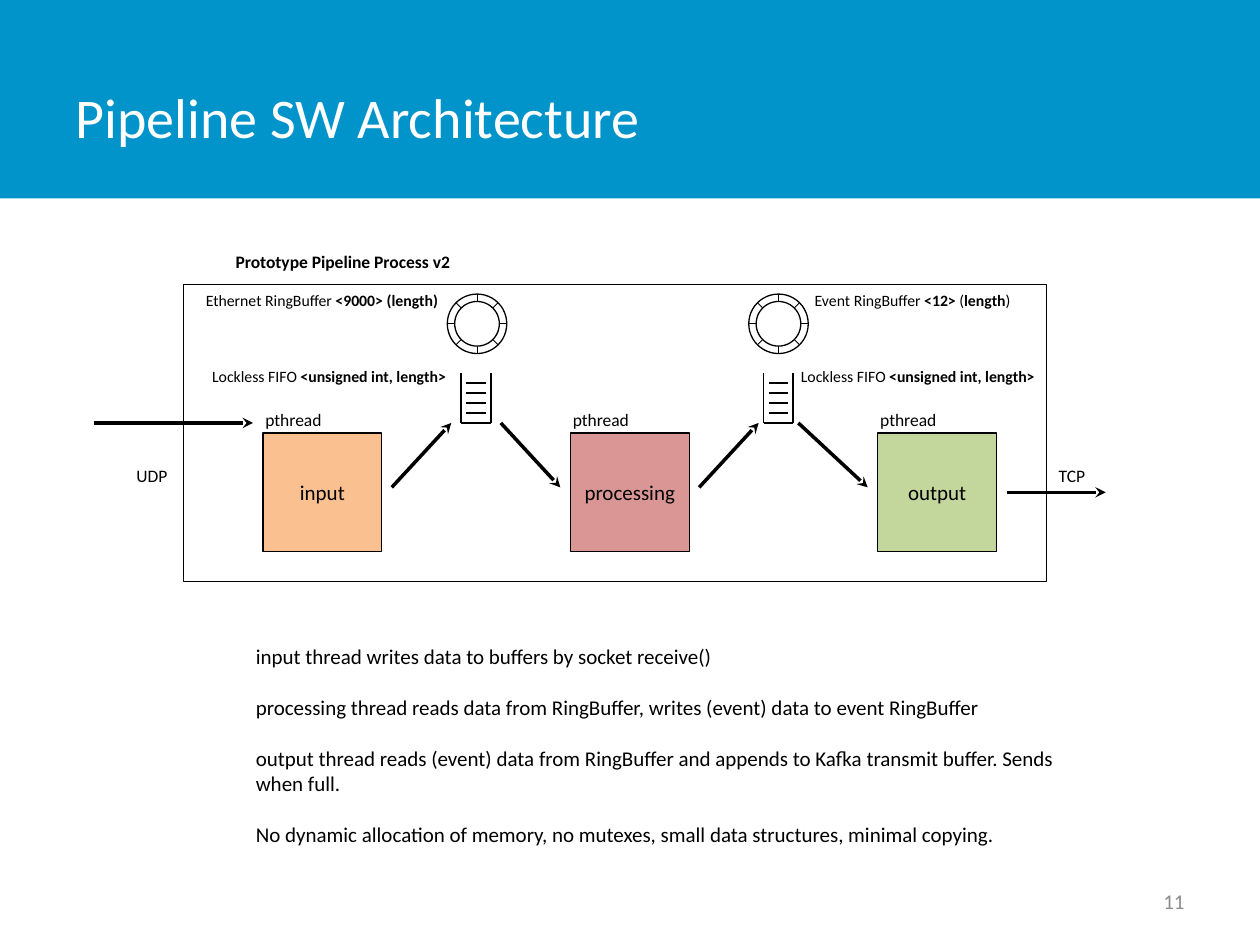
from dataclasses import dataclass
from math import cos, pi, sin
from typing import Any

from lxml.etree import SubElement
from pptx import Presentation
from pptx.dml.color import RGBColor
from pptx.enum.shapes import MSO_CONNECTOR, MSO_SHAPE
from pptx.enum.text import MSO_ANCHOR, MSO_AUTO_SIZE, PP_ALIGN
from pptx.oxml.ns import qn
from pptx.util import Inches, Pt

COLORS = {
    "banner": "0094CA", "input": "FAC090", "processing": "D99694",
    "output": "C3D69B", "ink": "000000", "paper": "FFFFFF", "page": "8C8C8C",
}
FONT = "Calibri"
CELL = 0.0787
GRID_LEFT, GRID_TOP = 0.04, 2.255
SPOKES = 8


@dataclass(frozen=True)
class Thread:
    name: str
    column: float


@dataclass(frozen=True)
class Buffer:
    ring_center: float
    fifo_left: float


@dataclass(frozen=True)
class Arrow:
    start: tuple[float, float]
    end: tuple[float, float]


@dataclass(frozen=True)
class Label:
    text: str
    column: float
    row: float
    columns: float
    bold: bool = False


@dataclass(frozen=True)
class Line:
    runs: tuple[tuple[str, bool], ...]
    indent: float = 0


@dataclass(frozen=True)
class BufferNote:
    column: float
    columns: float
    lines: tuple[Line, Line]


THREADS = [Thread(name, 26 + 31 * index)
           for index, name in enumerate(("input", "processing", "output"))]
BUFFERS = [Buffer(47.6, 46), Buffer(78, 76.5)]
ARROWS = [
    Arrow((9, 14), (25, 14)),
    Arrow((39, 20.5), (45, 14)),
    Arrow((50, 14), (56, 20.5)),
    Arrow((70, 20.5), (76, 14)),
    Arrow((80, 14), (87, 20.5)),
    Arrow((101, 21), (111, 21)),
]
LABELS = [Label("pthread", thread.column - 1, 12, 9) for thread in THREADS] + [
    Label("Prototype Pipeline Process v2", 22, -4, 26, True),
    Label("UDP", 12, 17.6, 9),
    Label("TCP", 105, 17.6, 9),
]
FIFO_RUNS = (("Lockless FIFO ", False), ("<unsigned int, length>", True))
BUFFER_NOTES = [
    BufferNote(19, 40, (
        Line((("Ethernet RingBuffer ", False), ("<9000> (length)", True))),
        Line(FIFO_RUNS, 0.05))),
    BufferNote(79, 30, (
        Line((("Event RingBuffer ", False), ("<12> ", True), ("(", False),
              ("length", True), (")", False)), 0.11),
        Line(FIFO_RUNS))),
]
NOTES = [
    "input thread writes data to buffers by socket receive()",
    "processing thread reads data from RingBuffer, writes (event) data to event RingBuffer",
    "output thread reads (event) data from RingBuffer and appends to Kafka transmit buffer. "
    "Sends when full.",
    "No dynamic allocation of memory, no mutexes, small data structures, minimal copying.",
]


def color(name: str) -> RGBColor:
    return RGBColor.from_string(COLORS[name])


def at(column: float, row: float) -> tuple[int, int]:
    return Inches(GRID_LEFT + column * CELL), Inches(GRID_TOP + row * CELL)


def cells(count: float) -> int:
    return Inches(count * CELL)


def place(shape: Any, left: float, top: float, width: float, height: float) -> None:
    shape.left, shape.top = Inches(left), Inches(top)
    shape.width, shape.height = Inches(width), Inches(height)


def style(paragraph: Any, size: float, ink: str = "ink", bold: bool | None = None) -> None:
    font = paragraph.font
    font.name, font.size, font.bold = FONT, Pt(size), bold
    font.color.rgb = color(ink)


def add_box(shapes: Any, kind: MSO_SHAPE, column: float, row: float, columns: float,
            rows: float, fill: str | None) -> Any:
    shape = shapes.add_shape(kind, *at(column, row), cells(columns), cells(rows))
    shape.shadow.inherit = False
    if fill:
        shape.fill.solid()
        shape.fill.fore_color.rgb = color(fill)
    else:
        shape.fill.background()
    shape.line.color.rgb = color("ink")
    shape.line.width = Pt(0.75)
    return shape


def add_line(shapes: Any, start: tuple[float, float], end: tuple[float, float],
             width: float, arrowhead: bool = False) -> None:
    connector = shapes.add_connector(MSO_CONNECTOR.STRAIGHT, *at(*start), *at(*end))
    connector.line.color.rgb = color("ink")
    connector.line.width = Pt(width)
    properties = connector.element.spPr
    if arrowhead:
        SubElement(properties.find(qn("a:ln")), qn("a:tailEnd"), type="stealth")
    SubElement(properties, qn("a:effectLst"))


def add_thread(shapes: Any, thread: Thread) -> None:
    box = add_box(shapes, MSO_SHAPE.RECTANGLE, thread.column, 15, 12, 12, thread.name)
    frame = box.text_frame
    frame.margin_left = frame.margin_right = 0
    frame.vertical_anchor = MSO_ANCHOR.MIDDLE
    frame.text = thread.name
    frame.paragraphs[0].alignment = PP_ALIGN.CENTER
    style(frame.paragraphs[0], 12)


def add_ring(shapes: Any, center: float) -> None:
    ring, middle, outer, inner = shapes.add_group_shape().shapes, 4, 3, 2.25
    add_box(ring, MSO_SHAPE.OVAL, center - outer, middle - outer, 2 * outer, 2 * outer, "paper")
    for spoke in range(SPOKES):
        angle = 2 * pi * spoke / SPOKES
        rim = (center + outer * cos(angle), middle + outer * sin(angle))
        add_line(ring, (center, middle), rim, 0.5)
    add_box(ring, MSO_SHAPE.OVAL, center - inner, middle - inner, 2 * inner, 2 * inner, "paper")


def add_fifo(shapes: Any, left: float) -> None:
    fifo, right, top, bottom = shapes.add_group_shape().shapes, left + 3, 9, 14
    for side in (left, right):
        add_line(fifo, (side, bottom), (side, top), 1)
    add_line(fifo, (left, bottom), (right, bottom), 1)
    for row in range(top + 1, bottom):
        add_line(fifo, (left + 0.5, row), (right - 0.5, row), 1)


def add_label(shapes: Any, label: Label) -> None:
    box = shapes.add_textbox(*at(label.column, label.row), cells(label.columns), cells(3.4))
    box.text_frame.word_wrap = True
    box.text_frame.text = label.text
    style(box.text_frame.paragraphs[0], 10, bold=label.bold)


def add_buffer_note(shapes: Any, note: BufferNote) -> None:
    box = shapes.add_textbox(*at(note.column, 0), cells(note.columns), cells(11))
    frame = box.text_frame
    frame.word_wrap = True
    for index, line in enumerate(note.lines):
        paragraph = frame.add_paragraph() if index else frame.paragraphs[0]
        paragraph.space_before = Pt(33 * index)
        paragraph._p.get_or_add_pPr().set("marL", str(Inches(line.indent)))
        style(paragraph, 9)
        for text, bold in line.runs:
            run = paragraph.add_run()
            run.text, run.font.bold = text, bold


def fill_placeholders(slide: Any) -> None:
    title, body = slide.placeholders
    place(title, 0.5, 0.3, 7.81, 1.25)
    title.text_frame.text = "Pipeline SW Architecture"
    title.text_frame.vertical_anchor = MSO_ANCHOR.MIDDLE
    title.text_frame.paragraphs[0].alignment = PP_ALIGN.LEFT
    style(title.text_frame.paragraphs[0], 32, "paper")
    place(body, 1.93, 5.06, 6.77, 1.92)
    frame = body.text_frame
    frame.auto_size = MSO_AUTO_SIZE.NONE
    for index, note in enumerate(NOTES):
        paragraph = frame.add_paragraph() if index else frame.paragraphs[0]
        paragraph.text = note
        paragraph.space_before = Pt(14.6 if index else 0)
        properties = paragraph._p.get_or_add_pPr()
        properties.set("marL", "0")
        properties.set("indent", "0")
        SubElement(properties, qn("a:buNone"))
        style(paragraph, 12)


def main() -> None:
    presentation = Presentation()
    presentation.slide_width, presentation.slide_height = Inches(10), Inches(7.5)
    slide = presentation.slides.add_slide(presentation.slide_layouts[1])
    shapes = slide.shapes
    fill_placeholders(slide)

    banner = shapes.add_shape(MSO_SHAPE.RECTANGLE, 0, 0, presentation.slide_width,
                              int(presentation.slide_height * 0.21))
    banner.shadow.inherit = False
    banner.fill.solid()
    banner.fill.fore_color.rgb = color("banner")
    banner.line.fill.background()
    banner.element.getparent().insert(2, banner.element)

    add_box(shapes, MSO_SHAPE.RECTANGLE, 18, 0, 87, 30, None)
    for thread in THREADS:
        add_thread(shapes, thread)
    for buffer in BUFFERS:
        add_ring(shapes, buffer.ring_center)
        add_fifo(shapes, buffer.fifo_left)
    for arrow in ARROWS:
        add_line(shapes, arrow.start, arrow.end, 2, arrowhead=True)
    for label in LABELS:
        add_label(shapes, label)
    for note in BUFFER_NOTES:
        add_buffer_note(shapes, note)

    page = shapes.add_textbox(Inches(7.17), Inches(6.95), Inches(2.33), Inches(0.4))
    page.text_frame.word_wrap = True
    page.text_frame.vertical_anchor = MSO_ANCHOR.MIDDLE
    page.text_frame.text = "11"
    page.text_frame.paragraphs[0].alignment = PP_ALIGN.RIGHT
    style(page.text_frame.paragraphs[0], 12, "page")
    presentation.save("out.pptx")


if __name__ == "__main__":
    main()
